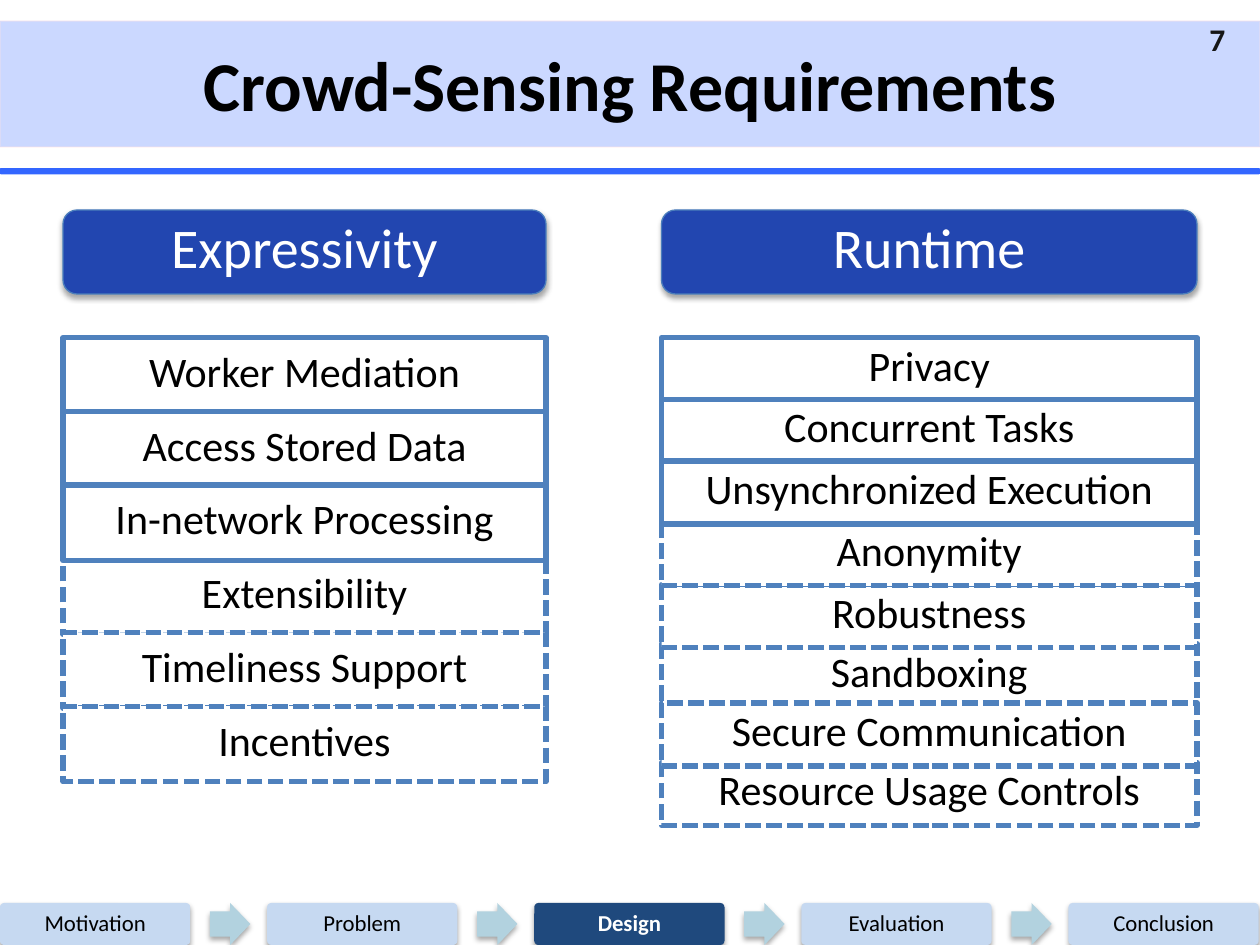
import itertools

import pptx
import pptx.dml.color
import pptx.enum.dml
import pptx.enum.shapes
import pptx.enum.text
import pptx.oxml
import pptx.oxml.ns
import pptx.util

RGBColor = pptx.dml.color.RGBColor
Shape = pptx.enum.shapes.MSO_SHAPE
Align = pptx.enum.text.PP_ALIGN

BLACK = RGBColor(0x00, 0x00, 0x00)
WHITE = RGBColor(0xFF, 0xFF, 0xFF)
NUMBER_INK = RGBColor(0x16, 0x16, 0x16)
BRIGHT_BLUE = RGBColor(0x33, 0x66, 0xFF)
BANNER_EDGE = RGBColor(0xFF, 0xE4, 0xE5)
HEADING_BLUE = RGBColor(0x22, 0x46, 0xB0)
HEADING_EDGE = RGBColor(0x4B, 0x7E, 0xBC)
BOX_EDGE = RGBColor(0x4F, 0x81, 0xBD)
STEP_BLUE = RGBColor(0xC6, 0xD9, 0xF1)
CURRENT_STEP_BLUE = RGBColor(0x1F, 0x49, 0x7D)
ARROW_BLUE = RGBColor(0xB2, 0xD2, 0xDF)

SHADOW = (
    f'<a:effectLst {pptx.oxml.ns.nsdecls("a")}>'
    '<a:outerShdw blurRad="39400" dist="23000" dir="5400000" rotWithShape="0">'
    '<a:srgbClr val="000000"><a:alpha val="35000"/></a:srgbClr>'
    '</a:outerShdw></a:effectLst>'
)

presentation = pptx.Presentation()
presentation.slide_width = pptx.util.Inches(10)
presentation.slide_height = pptx.util.Inches(7.5)
slide = presentation.slides.add_slide(presentation.slide_layouts[5])

# The grid has 120 columns and 90 square rows
CELL = presentation.slide_width / 120


def add_box(kind, column, row, columns, rows, fill, edge=None, weight=0.75, shadow=False):
    shape = slide.shapes.add_shape(
        kind, *(round(cells * CELL) for cells in (column, row, columns, rows)))
    shape.fill.solid()
    shape.fill.fore_color.rgb = fill
    if edge is None:
        shape.line.fill.background()
    else:
        shape.line.color.rgb = edge
        shape.line.width = pptx.util.Pt(weight)
    shape.shadow.inherit = False
    if shadow:
        properties = shape._element.spPr
        properties.remove(properties.find(pptx.oxml.ns.qn("a:effectLst")))
        properties.append(pptx.oxml.parse_xml(SHADOW))
    return shape


def write(shape, text, size, color, bold=False, spacing=0.8, align=Align.CENTER):
    frame = shape.text_frame
    frame.text = text
    frame.word_wrap = True
    frame.auto_size = pptx.enum.text.MSO_AUTO_SIZE.NONE
    frame.vertical_anchor = pptx.enum.text.MSO_ANCHOR.MIDDLE
    paragraph = frame.paragraphs[0]
    paragraph.alignment = align
    paragraph.line_spacing = spacing
    paragraph.space_before = pptx.util.Pt(size * 0.2)
    font = paragraph.runs[0].font
    font.name = "Calibri"
    font.size = pptx.util.Pt(size)
    font.bold = bold
    font.color.rgb = color


# Title banner
title = slide.shapes.title
title.left, title.top = 0, round(2 * CELL)
title.width, title.height = presentation.slide_width, round(12 * CELL)
title.fill.solid()
title.fill.fore_color.rgb = BRIGHT_BLUE
title.line.color.rgb = BANNER_EDGE
title.line.width = pptx.util.Pt(1)
for paint, opacity in ((title.fill, 25), (title.line.fill, 30)):
    alpha = pptx.oxml.parse_xml(
        f'<a:alpha {pptx.oxml.ns.nsdecls("a")} val="{opacity * 1000}"/>')
    paint._xPr.find(".//" + pptx.oxml.ns.qn("a:srgbClr")).append(alpha)
write(title, "Crowd-Sensing Requirements", 40, BLACK, bold=True, spacing=1.0)

# Rule below the banner and slide number
add_box(Shape.ROUNDED_RECTANGLE, 0, 16, 120, 0.6, BRIGHT_BLUE)
number = slide.shapes.add_textbox(
    *(round(cells * CELL) for cells in (114, 2, 6, 4)))
write(number, "7", 18, NUMBER_INK, bold=True, align=Align.LEFT)
number_font = number.text_frame.paragraphs[0].runs[0].font
number_font.fill._xPr.insert(1, pptx.oxml.parse_xml(SHADOW))

# Requirement columns: heading, left, width, row height, row pitches,
# labels, and the rows from back to front (the first three are solid)
requirement_columns = [
    ("Expressivity", 6, 46, 7.2, [7.02] * 5,
     ["Worker Mediation", "Access Stored Data", "In-network Processing",
      "Extensibility", "Timeliness Support", "Incentives"],
     [0, 1, 3, 4, 5, 2]),
    ("Runtime", 63, 51, 6, [5.88] * 4 + [5.64] * 3,
     ["Privacy", "Concurrent Tasks", "Unsynchronized Execution", "Anonymity",
      "Robustness", "Sandboxing", "Secure Communication",
      "Resource Usage Controls"],
     [0, 1, 7, 5, 4, 6, 3, 2]),
]
for heading, left, width, height, pitches, labels, stacking in requirement_columns:
    box = add_box(Shape.ROUNDED_RECTANGLE, left, 20, width, 8,
                  HEADING_BLUE, HEADING_EDGE, shadow=True)
    write(box, heading, 32, WHITE)
    tops = list(itertools.accumulate(pitches, initial=32.16))
    for index in stacking:
        box = add_box(Shape.RECTANGLE, left, tops[index], width, height,
                      WHITE, BOX_EDGE, 3)
        if index >= 3:
            # SQUARE_DOT is the sysDot preset, so the sysDash one is set by name
            box.line.dash_style = pptx.enum.dml.MSO_LINE.DASH
            box.line._ln.prstDash.set("val", "sysDash")
        write(box, labels[index], 24, BLACK)

# Progress bar
steps = ["Motivation", "Problem", "Design", "Evaluation", "Conclusion"]
for index, step in enumerate(steps):
    left = index * 25.44
    current = step == "Design"
    box = add_box(Shape.ROUNDED_RECTANGLE, left, 86, 18.12, 4,
                  CURRENT_STEP_BLUE if current else STEP_BLUE, shadow=True)
    box.adjustments[0] = 0.1
    frame = box.text_frame
    frame.margin_left = frame.margin_right = pptx.util.Inches(0.05)
    frame.margin_top = frame.margin_bottom = pptx.util.Inches(0.05)
    write(box, step, 13, WHITE if current else BLACK, bold=current, spacing=0.9)
    frame.paragraphs[0].space_before = pptx.util.Pt(0)
    if index < len(steps) - 1:
        arrow = add_box(Shape.RIGHT_ARROW, left + 20, 86, 3.84, 4,
                        ARROW_BLUE, shadow=True)
        arrow.adjustments[0] = 0.6

presentation.save("out.pptx")
